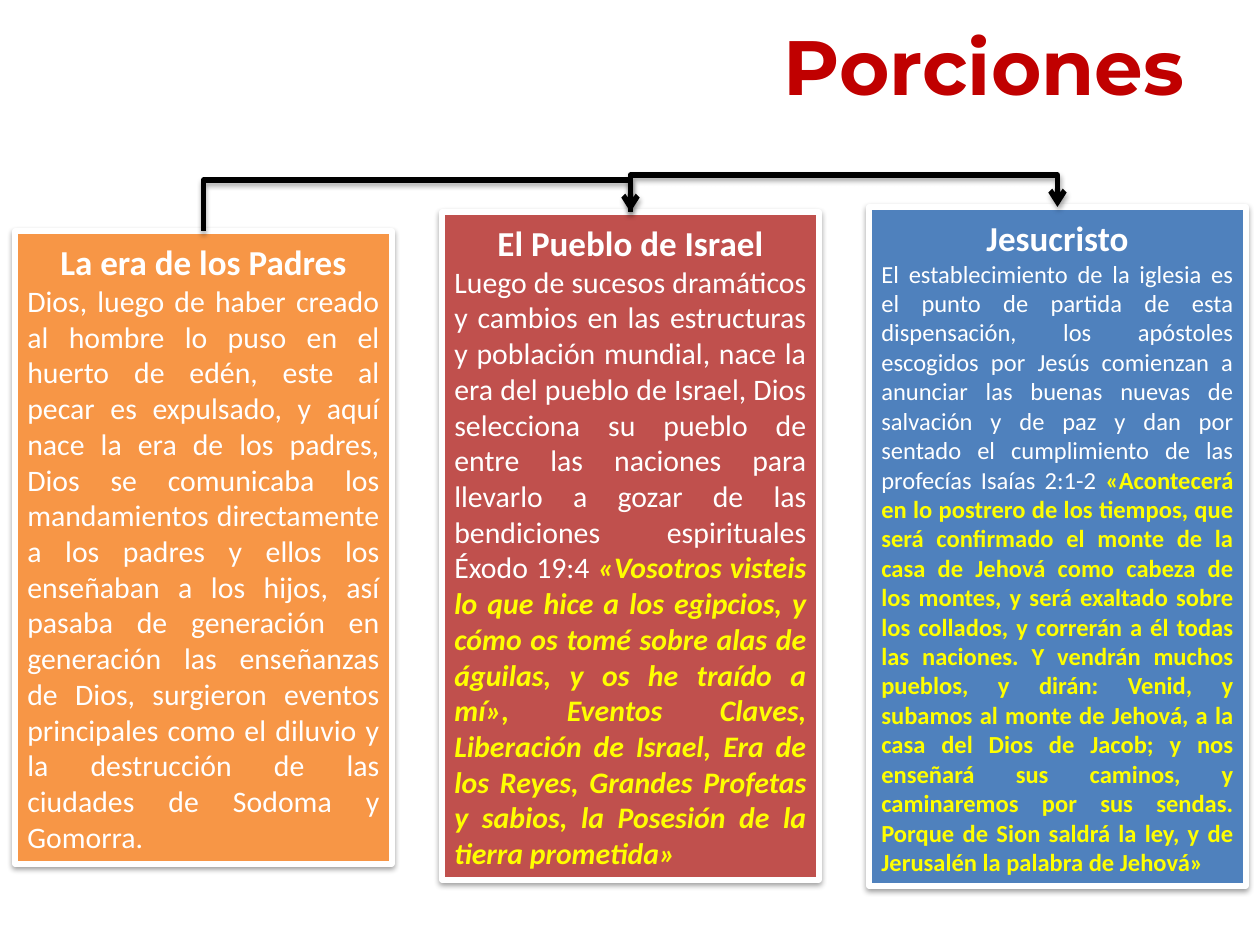
from dataclasses import dataclass

from lxml import etree
from pptx import Presentation
from pptx.dml.color import RGBColor
from pptx.enum.shapes import MSO_CONNECTOR, MSO_SHAPE
from pptx.enum.text import MSO_ANCHOR, MSO_AUTO_SIZE, PP_ALIGN
from pptx.oxml import parse_xml
from pptx.oxml.ns import qn
from pptx.shapes.autoshape import Shape
from pptx.util import Emu, Pt

ELBOW = MSO_CONNECTOR.ELBOW
RECT = MSO_SHAPE.RECTANGLE
MIDDLE, TOP_SIDE = MSO_ANCHOR.MIDDLE, 0
GROW = MSO_AUTO_SIZE.SHAPE_TO_FIT_TEXT
CENTER, JUST, RIGHT = PP_ALIGN.CENTER, PP_ALIGN.JUSTIFY, PP_ALIGN.RIGHT
SCALE = 914400 / 126
NS = "http://schemas.openxmlformats.org/drawingml/2006/main"
WHITE, BLACK, YELLOW, RED = "FFFFFF", "000000", "FFFF00", "C00000"
LEFT, STEP, WIDTH = 15, 427, 377


@dataclass
class Card:
    """One era, with its heading, story and quoted verse."""
    head: str
    body: str
    quote: str
    top: int
    height: int
    fill: str
    size: int
    slant: bool = False


@dataclass
class Link:
    """An elbow arrow from one card to the next, by way of a level."""
    start: int
    level: int


CARDS = [
    Card("La era de los Padres",
         "Dios, luego de haber creado al hombre lo puso en el huerto de edén, este al pecar es "
         "expulsado, y aquí nace la era de los padres, Dios se comunicaba los mandamientos "
         "directamente a los padres y ellos los enseñaban a los hijos, así pasaba de generación "
         "en generación las enseñanzas de Dios, surgieron eventos principales como el diluvio y "
         "la destrucción de las ciudades de Sodoma y Gomorra.",
         "", 231, 633, "F79646", 17),
    Card("El Pueblo de Israel",
         "Luego de sucesos dramáticos y cambios en las estructuras y población mundial, nace la "
         "era del pueblo de Israel, Dios selecciona su pueblo de entre las naciones para "
         "llevarlo a gozar de las bendiciones espirituales Éxodo 19:4 ",
         "«Vosotros visteis lo que hice a los egipcios, y cómo os tomé sobre alas de águilas, y "
         "os he traído a mí», Eventos Claves, Liberación de Israel, Era de los Reyes, Grandes "
         "Profetas y sabios, la Posesión de la tierra prometida»",
         212, 668, "C0504D", 17, True),
    Card("Jesucristo",
         "El establecimiento de la iglesia es el punto de partida de esta dispensación, los "
         "apóstoles escogidos por Jesús comienzan a anunciar las buenas nuevas de salvación y "
         "de paz y dan por sentado el cumplimiento de las profecías Isaías 2:1-2 ",
         "«Acontecerá en lo postrero de los tiempos, que será confirmado el monte de la casa de "
         "Jehová como cabeza de los montes, y será exaltado sobre los collados, y correrán a él "
         "todas las naciones. Y vendrán muchos pueblos, y dirán: Venid, y subamos al monte de "
         "Jehová, a la casa del Dios de Jacob; y nos enseñará sus caminos, y caminaremos por "
         "sus sendas. Porque de Sion saldrá la ley, y de Jerusalén la palabra de Jehová»",
         207, 679, "4F81BD", 14),
]
LINKS = [Link(0, 180), Link(1, 175)]


def px(num: float) -> Emu:
    """Turn px into EMU."""
    return Emu(round(num * SCALE))


def tint(code: str) -> RGBColor:
    """Turn a hex string into a colour."""
    return RGBColor.from_string(code)


def write(par, text: str, *, size: int, color: str = WHITE, bold: bool = False,
          slant: bool = False, font: str = "Calibri") -> None:
    """Add a run of text to a paragraph."""
    run = par.add_run()
    run.text = text
    run.font.size, run.font.name = Pt(size), font
    run.font.bold, run.font.italic = bold, slant
    run.font.color.rgb = tint(color)


def shade(props, alpha: int, gap: float) -> None:
    """Give shape properties a soft shadow below."""
    for old in props.findall(qn("a:effectLst")):
        props.remove(old)
    props.append(parse_xml(
        f'<a:effectLst xmlns:a="{NS}"><a:outerShdw blurRad="{Pt(3.1)}" dist="{Pt(gap)}" '
        f'dir="5400000" rotWithShape="0"><a:srgbClr val="{BLACK}">'
        f'<a:alpha val="{alpha * 1000}"/></a:srgbClr></a:outerShdw></a:effectLst>'))


def draw_title(slide, text: str) -> None:
    """Draw the slide title."""
    frame = slide.shapes.add_textbox(px(63), px(0), px(1134), px(130)).text_frame
    frame.word_wrap, frame.vertical_anchor = True, MIDDLE
    par = frame.paragraphs[0]
    par.alignment = RIGHT
    write(par, text, size=44, color=RED, bold=True, font="Montserrat")


def draw_card(slide, card: Card, col: int) -> Shape:
    """Draw a card in its column."""
    box = slide.shapes.add_shape(RECT, px(LEFT + col * STEP), px(card.top),
                                 px(WIDTH), px(card.height))
    box.fill.solid()
    box.fill.fore_color.rgb = tint(card.fill)
    box.line.color.rgb, box.line.width = tint(WHITE), Pt(3)
    box.shadow.inherit = False
    shade(box._element.spPr, 38, 1.6)
    frame = box.text_frame
    frame.word_wrap, frame.auto_size, frame.vertical_anchor = True, GROW, MIDDLE
    head, body = frame.paragraphs[0], frame.add_paragraph()
    head.alignment, body.alignment = CENTER, JUST
    write(head, card.head, size=20, bold=True)
    write(body, card.body, size=card.size)
    if card.quote:
        write(body, card.quote, size=card.size, color=YELLOW, bold=True, slant=card.slant)
    return box


def draw_link(slide, link: Link, boxes: list[Shape]) -> None:
    """Draw an elbow arrow that rises, crosses and drops on the next card."""
    low, high = CARDS[link.start].top, CARDS[link.start + 1].top
    rise = low - high
    mid = LEFT + WIDTH / 2 + (link.start + 0.5) * STEP
    line = slide.shapes.add_connector(ELBOW, px(0), px(0), px(rise), px(STEP))
    line.begin_connect(boxes[link.start], TOP_SIDE)
    line.end_connect(boxes[link.start + 1], TOP_SIDE)
    line.left, line.top = px(mid - rise / 2), px((low + high - STEP) / 2)
    line.width, line.height = px(rise), px(STEP)
    line.line.color.rgb, line.line.width = tint(BLACK), Pt(3)
    props = line._element.spPr
    frame = props.find(qn("a:xfrm"))
    for key, val in (("rot", "5400000"), ("flipH", "1"), ("flipV", "1")):
        frame.set(key, val)
    ratio = round((low - link.level) / rise * 100000)
    etree.SubElement(props.find(".//" + qn("a:avLst")), qn("a:gd"),
                     name="adj1", fmla=f"val {ratio}")
    etree.SubElement(props.find(qn("a:ln")), qn("a:tailEnd"), type="arrow")
    shade(props, 35, 1.8)


def main() -> None:
    """Build and save the slide."""
    deck = Presentation()
    deck.slide_width, deck.slide_height = px(1260), px(945)
    slide = deck.slides.add_slide(deck.slide_layouts[6])
    draw_title(slide, "Porciones")
    boxes = [draw_card(slide, card, col) for col, card in enumerate(CARDS)]
    for link in LINKS:
        draw_link(slide, link, boxes)
    deck.save("out.pptx")


if __name__ == "__main__":
    main()
